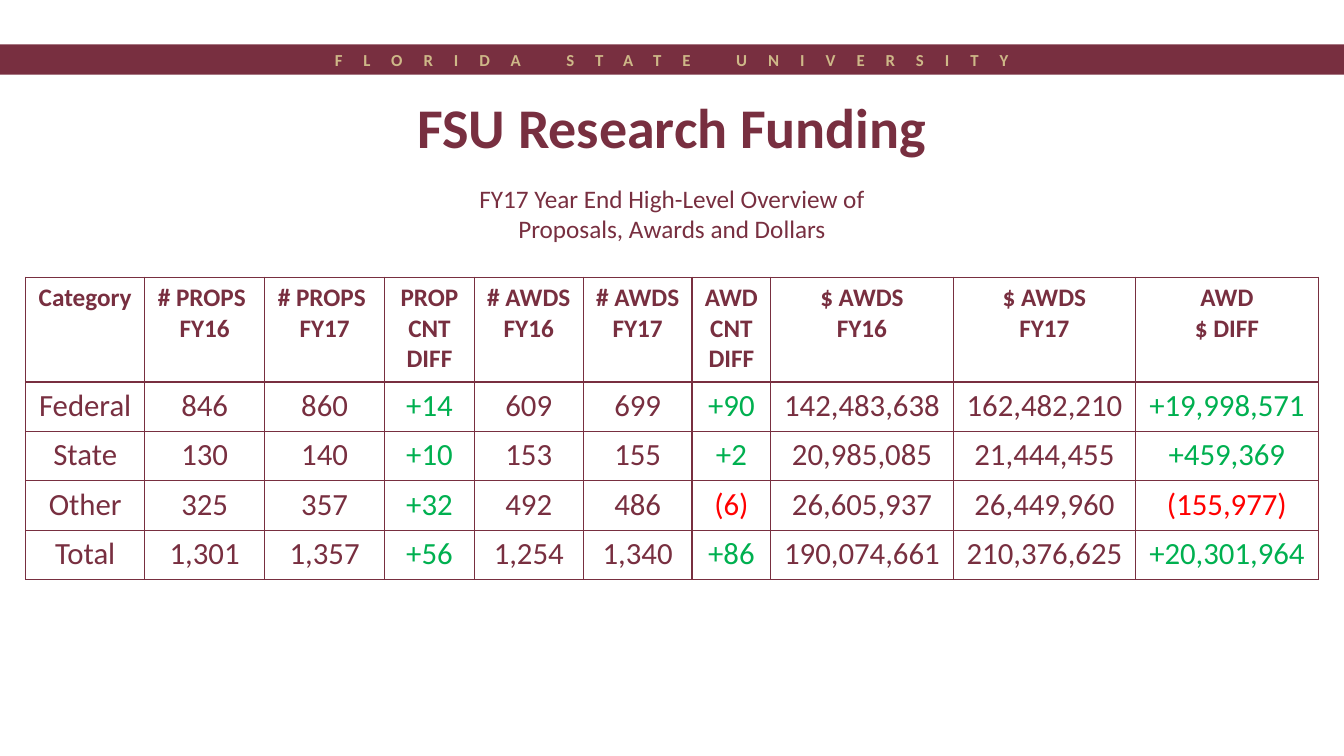
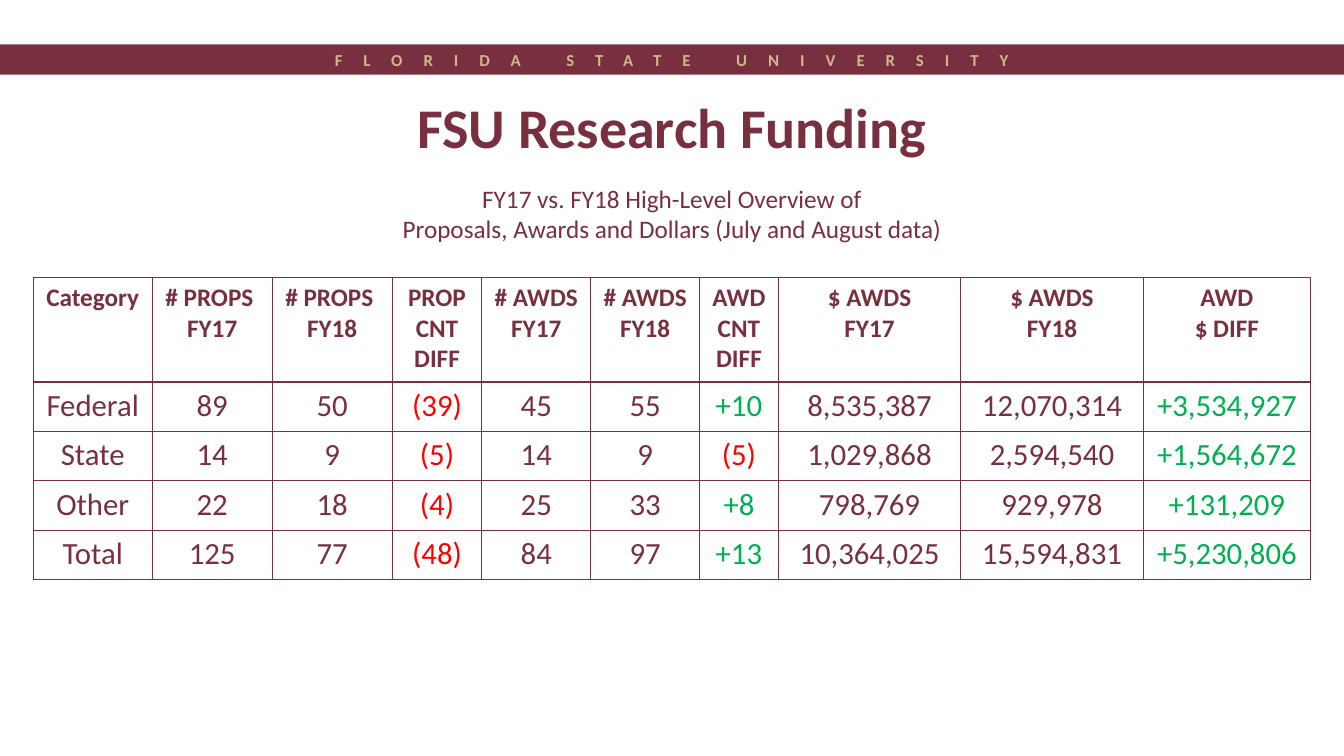
"""Build two slides comparing university research funding by fiscal year."""
from dataclasses import dataclass

from lxml.etree import SubElement
from pptx import Presentation
from pptx.dml.color import RGBColor
from pptx.enum.shapes import MSO_SHAPE
from pptx.enum.text import MSO_ANCHOR, PP_ALIGN
from pptx.oxml.ns import qn
from pptx.slide import Slide
from pptx.table import _Cell
from pptx.text.text import TextFrame
from pptx.util import Inches, Pt

COLORS = {
    "garnet": "782F40",
    "gold": "CEB888",
    "white": "FFFFFF",
    "gain": "00B050",
    "loss": "FF0000",
}
FONT = "Calibri"
SLIDE_WIDTH = 13.33
TABLE_TOP = 2.75
HEADER_HEIGHT = 1.04
ROW_HEIGHT = 0.49
BORDER_WIDTH = Pt(1)


@dataclass(frozen=True)
class Column:
    heading: str
    width: float


@dataclass(frozen=True)
class TextStyle:
    size: int
    color: str = "garnet"
    bold: bool = False
    spacing: int = 0


@dataclass(frozen=True)
class FundingReport:
    subtitle: list[str]
    years: tuple[str, str]
    last_width: float
    rows: list[list[str]]


REPORTS = [
    FundingReport(
        ["FY17 Year End High-Level Overview of", "Proposals, Awards and Dollars"],
        ("FY16", "FY17"),
        1.81,
        [
            ["Federal", "846", "860", "+14", "609", "699", "+90",
             "142,483,638", "162,482,210", "+19,998,571"],
            ["State", "130", "140", "+10", "153", "155", "+2",
             "20,985,085", "21,444,455", "+459,369"],
            ["Other", "325", "357", "+32", "492", "486", "(6)",
             "26,605,937", "26,449,960", "(155,977)"],
            ["Total", "1,301", "1,357", "+56", "1,254", "1,340", "+86",
             "190,074,661", "210,376,625", "+20,301,964"],
        ],
    ),
    FundingReport(
        ["FY17 vs. FY18 High-Level Overview of",
         "Proposals, Awards and Dollars (July and August data)"],
        ("FY17", "FY18"),
        1.66,
        [
            ["Federal", "89", "50", "(39)", "45", "55", "+10",
             "8,535,387", "12,070,314", "+3,534,927"],
            ["State", "14", "9", "(5)", "14", "9", "(5)",
             "1,029,868", "2,594,540", "+1,564,672"],
            ["Other", "22", "18", "(4)", "25", "33", "+8",
             "798,769", "929,978", "+131,209"],
            ["Total", "125", "77", "(48)", "84", "97", "+13",
             "10,364,025", "15,594,831", "+5,230,806"],
        ],
    ),
]

BAND_STYLE = TextStyle(12, "gold", bold=True, spacing=15)
TITLE_STYLE = TextStyle(40, bold=True)
SUBTITLE_STYLE = TextStyle(18)
HEADING_STYLE = TextStyle(18, bold=True)


def rgb(color: str) -> RGBColor:
    return RGBColor.from_string(COLORS[color])


def write_lines(frame: TextFrame, lines: list[str], style: TextStyle) -> None:
    for index, line in enumerate(lines):
        paragraph = frame.add_paragraph() if index else frame.paragraphs[0]
        paragraph.alignment = PP_ALIGN.CENTER
        run = paragraph.add_run()
        run.text = line
        run.font.name = FONT
        run.font.size = Pt(style.size)
        run.font.bold = style.bold
        run.font.color.rgb = rgb(style.color)
        if style.spacing:
            run.font._element.set("spc", str(style.spacing * 100))


def add_band(slide: Slide) -> None:
    band = slide.shapes.add_shape(
        MSO_SHAPE.RECTANGLE, 0, Inches(0.44), Inches(SLIDE_WIDTH), Inches(0.3)
    )
    band.shadow.inherit = False
    band.fill.solid()
    band.fill.fore_color.rgb = rgb("garnet")
    band.line.fill.background()
    band.text_frame.vertical_anchor = MSO_ANCHOR.MIDDLE
    write_lines(band.text_frame, ["FLORIDA STATE UNIVERSITY"], BAND_STYLE)


def add_heading(
    slide: Slide, top: float, lines: list[str], style: TextStyle, anchor: MSO_ANCHOR
) -> None:
    heading = slide.shapes.add_textbox(
        0, Inches(top), Inches(SLIDE_WIDTH), Inches(1.01)
    )
    heading.text_frame.word_wrap = True
    heading.text_frame.vertical_anchor = anchor
    write_lines(heading.text_frame, lines, style)


def report_columns(report: FundingReport) -> list[Column]:
    def yearly(label: str, width: float) -> list[Column]:
        return [Column(f"{label}\n{year}", width) for year in report.years]

    return [
        Column("Category", 1.18),
        *yearly("# PROPS ", 1.19),
        Column("PROP\nCNT DIFF", 0.89),
        *yearly("# AWDS", 1.08),
        Column("AWD\nCNT\nDIFF", 0.78),
        *yearly("$ AWDS", 1.81),
        Column("AWD\n$ DIFF", report.last_width),
    ]


def value_style(value: str) -> TextStyle:
    return TextStyle(22, {"+": "gain", "(": "loss"}.get(value[0], "garnet"))


def fill_cell(cell: _Cell, text: str, style: TextStyle) -> None:
    properties = cell._tc.get_or_add_tcPr()
    for side in ("lnL", "lnR", "lnT", "lnB"):
        border = SubElement(properties, qn(f"a:{side}"), w=str(BORDER_WIDTH))
        paint = SubElement(border, qn("a:solidFill"))
        SubElement(paint, qn("a:srgbClr"), val=COLORS["garnet"])
    cell.fill.solid()
    cell.fill.fore_color.rgb = rgb("white")
    write_lines(cell.text_frame, text.split("\n"), style)


def add_funding_table(slide: Slide, report: FundingReport) -> None:
    columns = report_columns(report)
    width = sum(column.width for column in columns)
    heights = [HEADER_HEIGHT] + [ROW_HEIGHT] * len(report.rows)
    table = slide.shapes.add_table(
        len(heights), len(columns),
        Inches((SLIDE_WIDTH - width) / 2), Inches(TABLE_TOP),
        Inches(width), Inches(sum(heights)),
    ).table
    table.first_row = False
    table.horz_banding = False
    for row, height in zip(table.rows, heights):
        row.height = Inches(height)
    for index, column in enumerate(columns):
        table.columns[index].width = Inches(column.width)
        fill_cell(table.cell(0, index), column.heading, HEADING_STYLE)
    for row_index, values in enumerate(report.rows, start=1):
        for index, value in enumerate(values):
            fill_cell(table.cell(row_index, index), value, value_style(value))


def main() -> None:
    deck = Presentation()
    deck.slide_width = Inches(SLIDE_WIDTH)
    deck.slide_height = Inches(7.5)
    for report in REPORTS:
        slide = deck.slides.add_slide(deck.slide_layouts[6])
        add_band(slide)
        add_heading(
            slide, 0.75, ["FSU Research Funding"], TITLE_STYLE, MSO_ANCHOR.MIDDLE
        )
        add_heading(slide, 1.77, report.subtitle, SUBTITLE_STYLE, MSO_ANCHOR.TOP)
        add_funding_table(slide, report)
    deck.save("out.pptx")


if __name__ == "__main__":
    main()
